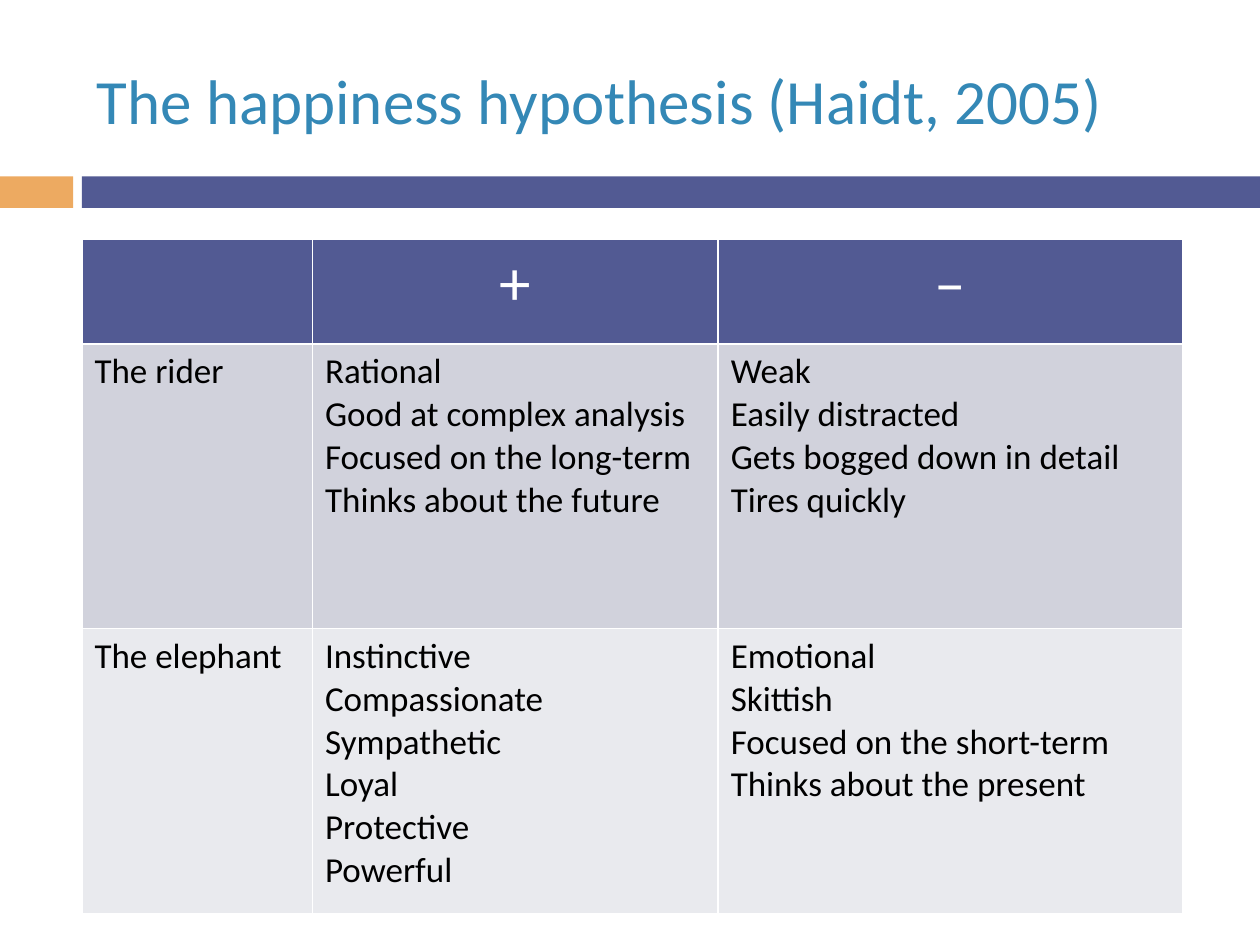
"""Build the slide comparing the rider and the elephant."""
from dataclasses import dataclass

from lxml.etree import SubElement
from pptx import Presentation
from pptx.dml.color import RGBColor
from pptx.enum.shapes import MSO_SHAPE
from pptx.enum.text import MSO_ANCHOR, PP_ALIGN
from pptx.oxml.ns import qn
from pptx.slide import Slide
from pptx.table import _Cell
from pptx.text.text import TextFrame
from pptx.util import Inches, Pt

COLORS = {
    "orange": "EDAA61",
    "indigo": "525A93",
    "title": "3488B6",
    "rider": "D1D2DC",
    "elephant": "E9EAEE",
    "white": "FFFFFF",
    "black": "000000",
}
FONT = "Calibri"
COLUMN_WIDTHS = (1.83, 3.22, 3.69)


@dataclass
class Bar:
    left: float
    width: float
    color: str


@dataclass
class TableRow:
    height: float
    fill: str
    color: str
    size: int
    align: PP_ALIGN
    cells: list[list[str]]


BARS = [Bar(0, 0.58, "orange"), Bar(0.65, 9.35, "indigo")]
ROWS = [
    TableRow(0.83, "indigo", "white", 36, PP_ALIGN.CENTER, [[], ["+"], ["–"]]),
    TableRow(2.26, "rider", "black", 20, PP_ALIGN.LEFT, [
        ["The rider"],
        ["Rational", "Good at complex analysis", "Focused on the long-term",
         "Thinks about the future"],
        ["Weak", "Easily distracted", "Gets bogged down in detail",
         "Tires quickly"],
    ]),
    TableRow(2.26, "elephant", "black", 20, PP_ALIGN.LEFT, [
        ["The elephant"],
        ["Instinctive", "Compassionate", "Sympathetic", "Loyal", "Protective",
         "Powerful"],
        ["Emotional", "Skittish", "Focused on the short-term",
         "Thinks about the present"],
    ]),
]


def rgb(name: str) -> RGBColor:
    return RGBColor.from_string(COLORS[name])


def write_lines(frame: TextFrame, lines: list[str], size: int, color: str,
                align: PP_ALIGN = PP_ALIGN.LEFT) -> None:
    for index, line in enumerate(lines):
        paragraph = frame.add_paragraph() if index else frame.paragraphs[0]
        paragraph.alignment = align
        run = paragraph.add_run()
        run.text = line
        run.font.name = FONT
        run.font.size = Pt(size)
        run.font.bold = False
        run.font.color.rgb = rgb(color)


def draw_bar(slide: Slide, bar: Bar) -> None:
    shape = slide.shapes.add_shape(MSO_SHAPE.RECTANGLE, Inches(bar.left),
                                   Inches(1.4), Inches(bar.width), Inches(0.25))
    shape.shadow.inherit = False
    shape.fill.solid()
    shape.fill.fore_color.rgb = rgb(bar.color)
    shape.line.fill.background()


def draw_title(slide: Slide, title: str) -> None:
    box = slide.shapes.add_textbox(Inches(0.67), Inches(0.25), Inches(8.92),
                                   Inches(1.08))
    box.text_frame.word_wrap = True
    box.text_frame.vertical_anchor = MSO_ANCHOR.MIDDLE
    write_lines(box.text_frame, [title], 36, "title")


def style_cell(cell: _Cell, fill: str) -> None:
    properties = cell._tc.get_or_add_tcPr()
    for side in ("a:lnL", "a:lnR", "a:lnT", "a:lnB"):
        border = SubElement(properties, qn(side), w=str(Pt(1)))
        solid = SubElement(border, qn("a:solidFill"))
        SubElement(solid, qn("a:srgbClr"), val=COLORS["white"])
    cell.fill.solid()
    cell.fill.fore_color.rgb = rgb(fill)


def draw_table(slide: Slide, rows: list[TableRow]) -> None:
    frame = slide.shapes.add_table(
        len(rows), len(COLUMN_WIDTHS), Inches(0.65), Inches(1.9),
        Inches(sum(COLUMN_WIDTHS)), Inches(sum(row.height for row in rows)))
    table = frame.table
    for column, width in zip(table.columns, COLUMN_WIDTHS):
        column.width = Inches(width)
    for table_row, row in zip(table.rows, rows):
        table_row.height = Inches(row.height)
        for cell, lines in zip(table_row.cells, row.cells):
            style_cell(cell, row.fill)
            write_lines(cell.text_frame, lines, row.size, row.color, row.align)


def main() -> None:
    presentation = Presentation()
    presentation.slide_width = Inches(10)
    presentation.slide_height = Inches(7.5)
    slide = presentation.slides.add_slide(presentation.slide_layouts[6])
    for bar in BARS:
        draw_bar(slide, bar)
    draw_title(slide, "The happiness hypothesis (Haidt, 2005)")
    draw_table(slide, ROWS)
    presentation.save("out.pptx")


if __name__ == "__main__":
    main()
